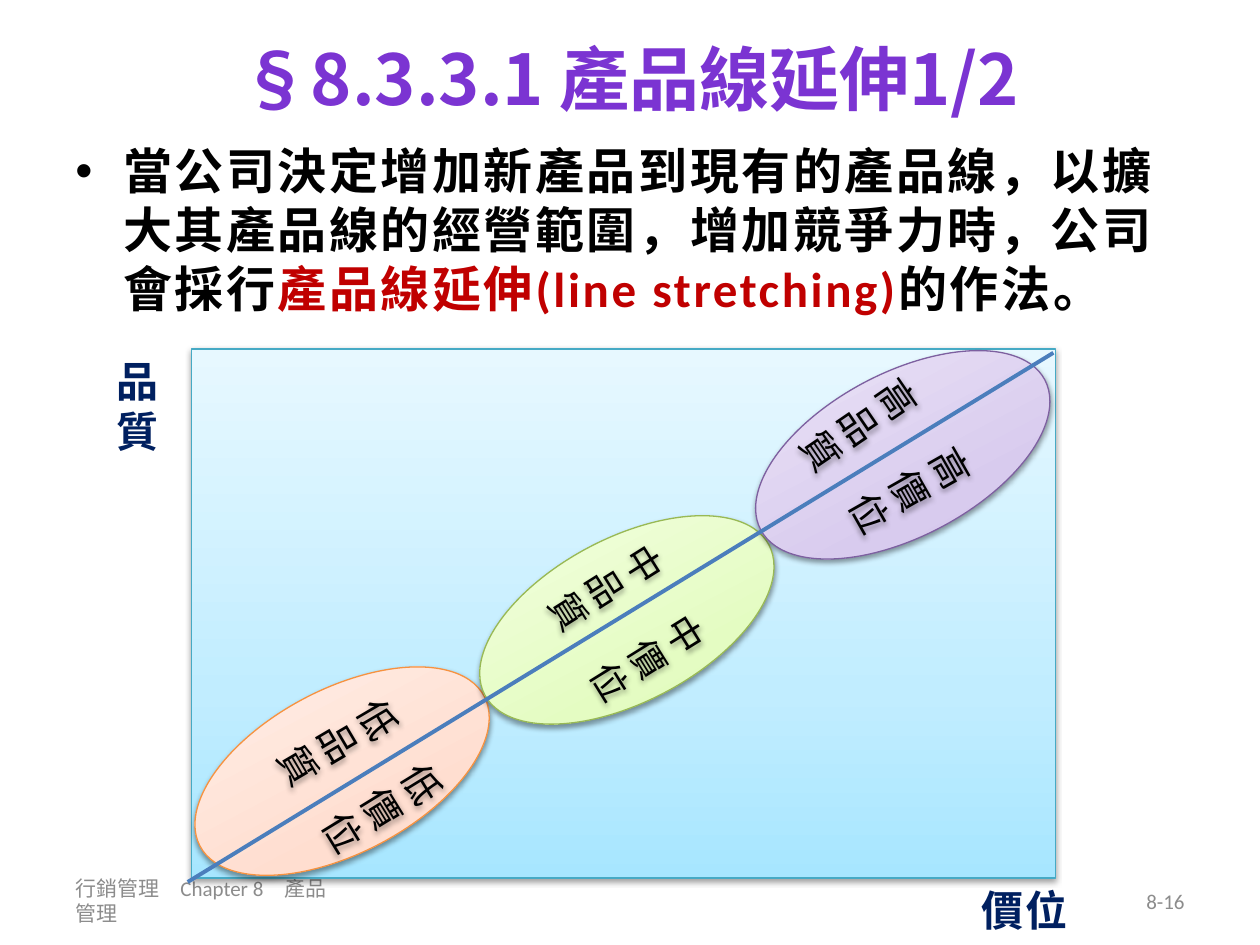
"""Build the slide on product line stretching."""
from lxml.etree import SubElement
from pptx import Presentation
from pptx.dml.color import RGBColor
from pptx.enum.shapes import MSO_CONNECTOR, MSO_SHAPE
from pptx.enum.text import MSO_ANCHOR, PP_ALIGN
from pptx.oxml import parse_xml
from pptx.oxml.ns import nsdecls, qn
from pptx.util import Inches, Pt

BLACK = RGBColor(0, 0, 0)
RED = RGBColor(0xC0, 0, 0)
NAVY = RGBColor(0, 0x20, 0x60)
GRAY = RGBColor(0x8C, 0x8C, 0x8C)
PURPLE = RGBColor(0x7B, 0x34, 0xD2)
BLUE = RGBColor(0x4B, 0x7E, 0xBC)
TEAL = RGBColor(0x46, 0xAA, 0xC5)
ORANGE = RGBColor(0xF6, 0x92, 0x40)
GREEN = RGBColor(0x98, 0xB9, 0x55)
VIOLET = RGBColor(0x7D, 0x60, 0xA0)
SANS, BODY = "Noto Sans CJK SC", "Calibri"

TITLE = "§8.3.3.1 產品線延伸1/2"
POINT = [
    ("當公司決定增加新產品到現有的產品線，以擴大其產品線的經營範圍，增加競爭力時，公司會採行", BLACK),
    ("產品線延伸(line stretching)", RED),
    ("的作法。", BLACK),
]
FOOT = "行銷管理　Chapter 8　產品管理"
PAGE = "8-16"
AXES = [("品質", (0.83, 2.77, 0.45, 0.91)), ("價位", (7.69, 6.97, 1.35, 0.5))]
FIELD = (1.52, 2.77, 6.86, 4.2)
SKY = ("A7E6FF", "C1EDFF", "E7F8FF")
OVALS = [
    ((1.44, 5.47), ("FFD2BD", "FFDED0", "FFF2ED"), ORANGE, 22, [
        ("低價位", (2.33, 6.19, 1.31, 0.47), 328.5),
        ("低品質", (1.98, 5.67, 1.31, 0.47), 329.6)]),
    ((3.7, 4.27), ("DAFDA7", "E4FCC2", "F5FFE7"), GREEN, 21, [
        ("中品質", (4.13, 4.45, 1.26, 0.45), 327.8),
        ("中價位", (4.46, 5.01, 1.26, 0.45), 328.2)]),
    ((5.89, 2.96), ("C9B5E8", "D8CBEE", "F0EAF9"), VIOLET, 22, [
        ("高價位", (6.51, 3.67, 1.31, 0.44), 330.4),
        ("高品質", (6.11, 3.16, 1.31, 0.44), 325.7)]),
]
OVAL = (2.55, 1.3)
TILT = 332.2
TREND = (1.49, 7, 8.36, 2.8)


def place(box):
    return [Inches(n) for n in box]


def write(para, text, size, color, bold=False, font=BODY, east=BODY, gap=0):
    run = para.add_run()
    run.text = text
    run.font.size = Pt(size)
    run.font.bold = bold
    run.font.color.rgb = color
    run.font.name = font
    props = run.font._element
    SubElement(props, qn("a:ea")).set("typeface", east)
    if gap:
        props.set("spc", str(int(gap * 100)))


def label(slide, box, runs, size, align=PP_ALIGN.LEFT, anchor=MSO_ANCHOR.TOP, **style):
    shape = slide.shapes.add_textbox(*place(box))
    frame = shape.text_frame
    frame.word_wrap = True
    frame.vertical_anchor = anchor
    para = frame.paragraphs[0]
    para.alignment = align
    for text, color in runs:
        write(para, text, size, color, **style)
    return shape


def shade(shape):
    shape._element.spPr.append(parse_xml(
        f'<a:effectLst {nsdecls("a")}><a:outerShdw blurRad="40000" dist="20000" '
        'dir="5400000" rotWithShape="0"><a:srgbClr val="000000">'
        '<a:alpha val="38000"/></a:srgbClr></a:outerShdw></a:effectLst>'))


def panel(slide, kind, box, tones, edge, turn=0):
    shape = slide.shapes.add_shape(kind, *place(box))
    shape.rotation = turn
    stops = "".join(
        f'<a:gs pos="{pos}"><a:srgbClr val="{tone}"/></a:gs>'
        for pos, tone in zip((0, 35000, 100000), tones))
    shape._element.spPr.append(parse_xml(
        f'<a:gradFill {nsdecls("a")} rotWithShape="1"><a:gsLst>{stops}</a:gsLst>'
        '<a:lin ang="16200000" scaled="0"/></a:gradFill>'))
    shape.line.color.rgb = edge
    shape.line.width = Pt(0.75)
    shade(shape)


def bullet(shape):
    props = shape.text_frame.paragraphs[0]._p.get_or_add_pPr()
    props.set("marL", str(Inches(0.38)))
    props.set("indent", str(Inches(-0.38)))
    SubElement(props, qn("a:buFont")).set("typeface", "Arial")
    SubElement(props, qn("a:buChar")).set("char", "•")


def chart(slide):
    panel(slide, MSO_SHAPE.RECTANGLE, FIELD, SKY, TEAL)
    for spot, tones, edge, size, words in OVALS:
        panel(slide, MSO_SHAPE.OVAL, spot + OVAL, tones, edge, TILT)
        for text, box, turn in words:
            shape = label(slide, box, [(text, BLACK)], size, PP_ALIGN.CENTER, font=SANS)
            shape.rotation = turn
            shape.text_frame._txBody.bodyPr.set("vert", "vert")
            shade(shape)
    line = slide.shapes.add_connector(MSO_CONNECTOR.STRAIGHT, *place(TREND))
    line.line.color.rgb = BLUE
    line.line.width = Pt(2.25)
    SubElement(line._element.spPr, qn("a:effectLst"))


def main():
    deck = Presentation()
    deck.slide_width, deck.slide_height = Inches(10), Inches(7.5)
    slide = deck.slides.add_slide(deck.slide_layouts[6])
    mid = MSO_ANCHOR.MIDDLE
    label(slide, (0.5, 0, 9, 1.23), [(TITLE, PURPLE)], 40, PP_ALIGN.CENTER, mid,
          bold=True, font=SANS, east=SANS)
    bullet(label(slide, (0.5, 1.07, 9, 2.2), POINT, 28, bold=True, gap=1.5))
    label(slide, (0.5, 6.95, 2.33, 0.4), [(FOOT, GRAY)], 12, anchor=mid)
    label(slide, (7.17, 6.95, 2.33, 0.4), [(PAGE, GRAY)], 12, PP_ALIGN.RIGHT, mid)
    chart(slide)
    for text, box in AXES:
        label(slide, box, [(text, NAVY)], 24, bold=True, gap=1.5)
    deck.save("out.pptx")


if __name__ == "__main__":
    main()
